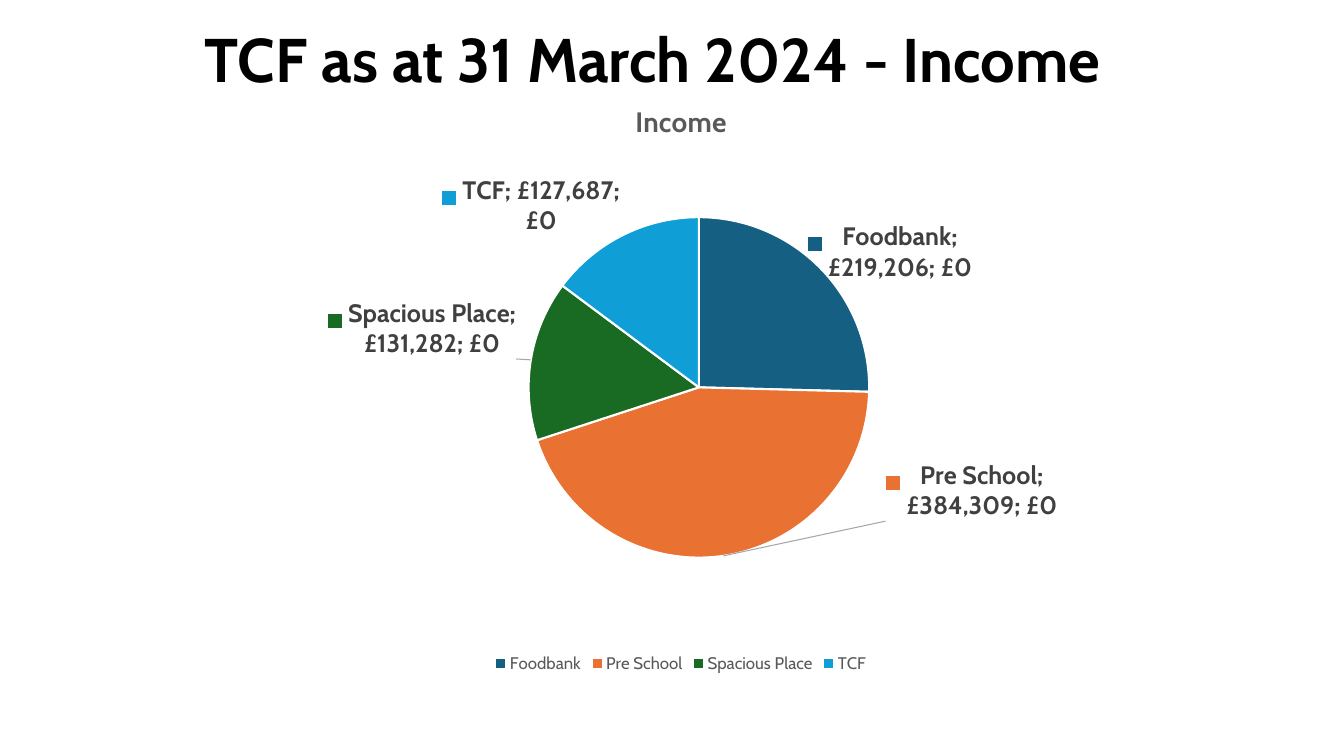
"""Build the income slide: a heading above a labelled pie chart."""
from lxml.etree import SubElement
from pptx import Presentation
from pptx.chart.data import CategoryChartData
from pptx.dml.color import RGBColor
from pptx.enum.chart import XL_CHART_TYPE, XL_LABEL_POSITION, XL_LEGEND_POSITION
from pptx.oxml import parse_xml
from pptx.oxml.ns import nsdecls, qn
from pptx.util import Inches, Pt

COLORS = {"heading": "000000", "muted": "595959", "label": "404040",
          "border": "FFFFFF", "leader": "A6A6A6"}
HEADING = "TCF as at 31 March 2024 - Income"
CHART_TITLE = "Income"
CURRENCY = '"£"#,##0'
INCOME = [
    ("Foodbank", 219206, "156082", (-0.02, 0.03)),
    ("Pre School", 384309, "E97132", (0.18, -0.17)),
    ("Spacious Place", 131282, "196B24", (-0.01, 0)),
    ("TCF", 127687, "0F9ED5", (0, 0.01)),
]
FONTS = {
    "heading": {"name": "Cabin", "size": Pt(44), "bold": True},
    "title": {"name": "Cabin", "size": Pt(20), "bold": True},
    "label": {"name": "Cabin", "size": Pt(18), "bold": True},
    "legend": {"name": "Cabin", "size": Pt(12), "bold": False},
}
SLIDE_SIZE = (13.33, 7.5)
HEADING_BOX = (1.93, 0.16, 9.64, 0.84)
CHART_BOX = (2.31, 0.79, 8.89, 5.93)
PIE_LEFT, PIE_TOP, PIE_WIDTH = 0.33, 0.23, 0.38
PIE_AREA = {"x": PIE_LEFT, "y": PIE_TOP, "w": PIE_WIDTH,
            "h": round(PIE_WIDTH * CHART_BOX[2] / CHART_BOX[3], 2)}


def style_font(font, role, color):
    for attribute, value in FONTS[role].items():
        setattr(font, attribute, value)
    font.color.rgb = RGBColor.from_string(COLORS[color])


def manual_layout(settings):
    layout = parse_xml(f"<c:layout {nsdecls('c')}><c:manualLayout/></c:layout>")
    for tag, value in settings.items():
        SubElement(layout[0], qn(f"c:{tag}")).set("val", str(value))
    return layout


def show_parts(labels):
    for tag in ("showLegendKey", "showVal", "showCatName", "showPercent"):
        labels.find(qn(f"c:{tag}")).set("val", "1")
    separator = parse_xml(f"<c:separator {nsdecls('c')}>; </c:separator>")
    last = labels.find(qn("c:showBubbleSize"))
    if last is None:
        last = labels.find(qn("c:showPercent"))
    last.addnext(separator)


def add_heading(slide):
    frame = slide.shapes.add_textbox(*map(Inches, HEADING_BOX)).text_frame
    frame.word_wrap = True
    run = frame.paragraphs[0].add_run()
    run.text = HEADING
    style_font(run.font, "heading", "heading")


def label_slices(series):
    labels = series.data_labels
    labels.number_format = CURRENCY
    labels.number_format_is_linked = False
    labels.position = XL_LABEL_POSITION.OUTSIDE_END
    style_font(labels.font, "label", "label")
    labels_xml = series._element.find(qn("c:dLbls"))
    show_parts(labels_xml)
    for old in labels_xml.findall(qn("c:showLeaderLines")):
        labels_xml.remove(old)
    SubElement(labels_xml, qn("c:showLeaderLines")).set("val", "1")
    labels_xml.append(parse_xml(
        f"<c:leaderLines {nsdecls('c', 'a')}><c:spPr><a:ln w='9525'><a:solidFill>"
        f"<a:srgbClr val='{COLORS['leader']}'/></a:solidFill></a:ln></c:spPr></c:leaderLines>"))

    for index, (_, _, color, (shift_x, shift_y)) in enumerate(INCOME):
        point = series.points[index]
        point.format.fill.solid()
        point.format.fill.fore_color.rgb = RGBColor.from_string(color)
        point.format.line.color.rgb = RGBColor.from_string(COLORS["border"])
        point.format.line.width = Pt(1.5)
        style_font(point.data_label.font, "label", "label")
        point.data_label.position = XL_LABEL_POSITION.OUTSIDE_END
        label = labels_xml.findall(qn("c:dLbl"))[index]
        show_parts(label)
        layout = manual_layout({"x": shift_x, "y": shift_y})
        label.find(qn("c:idx")).addnext(layout)
        number_format = parse_xml(f"<c:numFmt {nsdecls('c')} sourceLinked='0'/>")
        number_format.set("formatCode", CURRENCY)
        layout.addnext(number_format)


def add_income_chart(slide):
    data = CategoryChartData(number_format=CURRENCY)
    data.categories = [name for name, *_ in INCOME]
    data.add_series(CHART_TITLE, [amount for _, amount, *_ in INCOME])
    chart = slide.shapes.add_chart(
        XL_CHART_TYPE.PIE, *map(Inches, CHART_BOX), data).chart
    style_font(chart.font, "legend", "muted")
    chart.has_title = True
    paragraph = chart.chart_title.text_frame.paragraphs[0]
    run = paragraph.add_run()
    run.text = CHART_TITLE
    style_font(run.font, "title", "muted")
    chart.chart_title.include_in_layout = False
    chart.has_legend = True
    chart.legend.position = XL_LEGEND_POSITION.BOTTOM
    chart.legend.include_in_layout = False
    style_font(chart.legend.font, "legend", "muted")
    plot = chart.plots[0]
    plot.vary_by_categories = True
    label_slices(plot.series[0])
    plot_area = chart._chartSpace.chart.plotArea
    for old in plot_area.findall(qn("c:layout")):
        plot_area.remove(old)
    plot_area.insert(0, manual_layout(
        {"layoutTarget": "inner", "xMode": "edge", "yMode": "edge", **PIE_AREA}))


def main():
    presentation = Presentation()
    presentation.slide_width, presentation.slide_height = map(Inches, SLIDE_SIZE)
    slide = presentation.slides.add_slide(presentation.slide_layouts[6])
    add_income_chart(slide)
    add_heading(slide)
    presentation.save("out.pptx")


if __name__ == "__main__":
    main()
